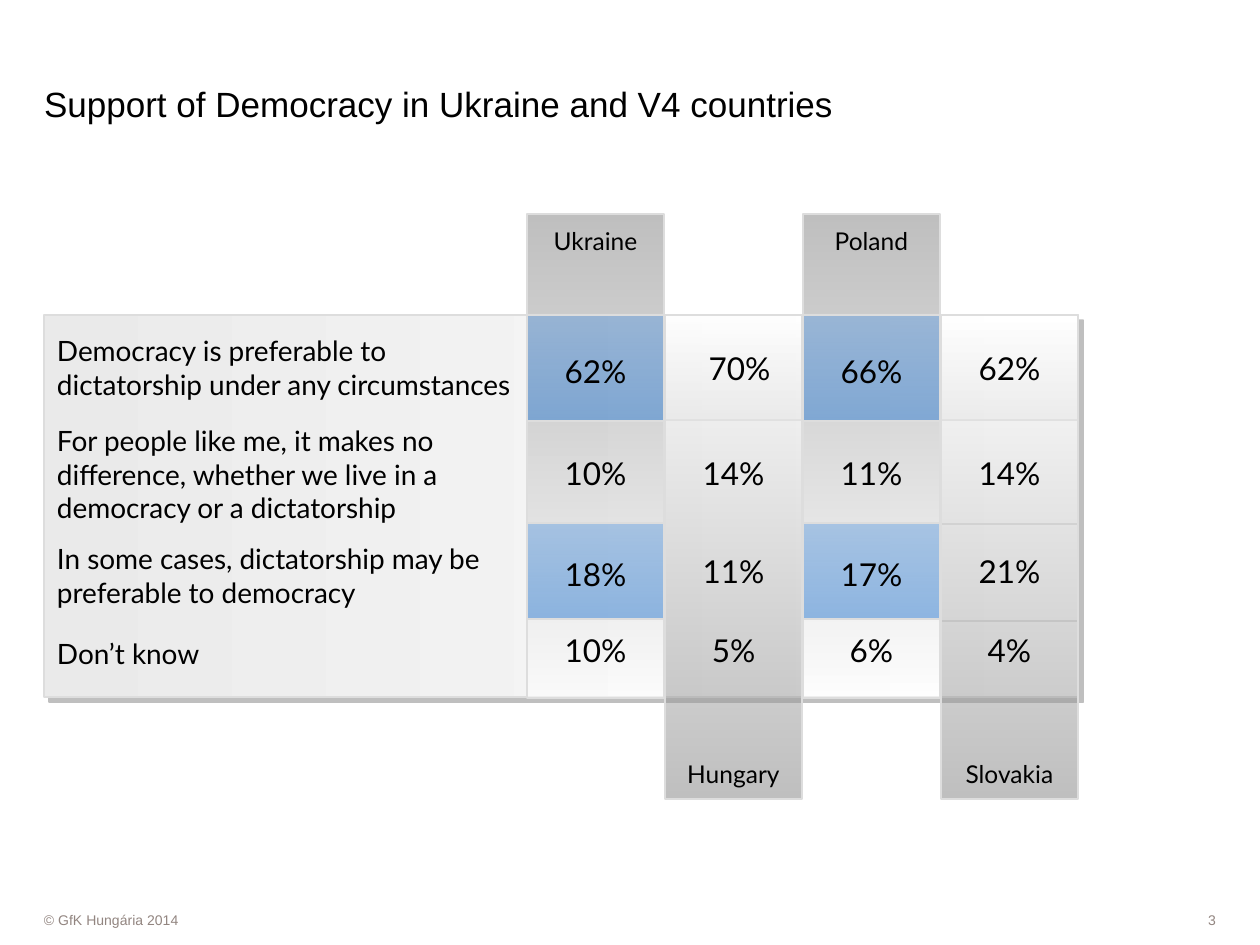
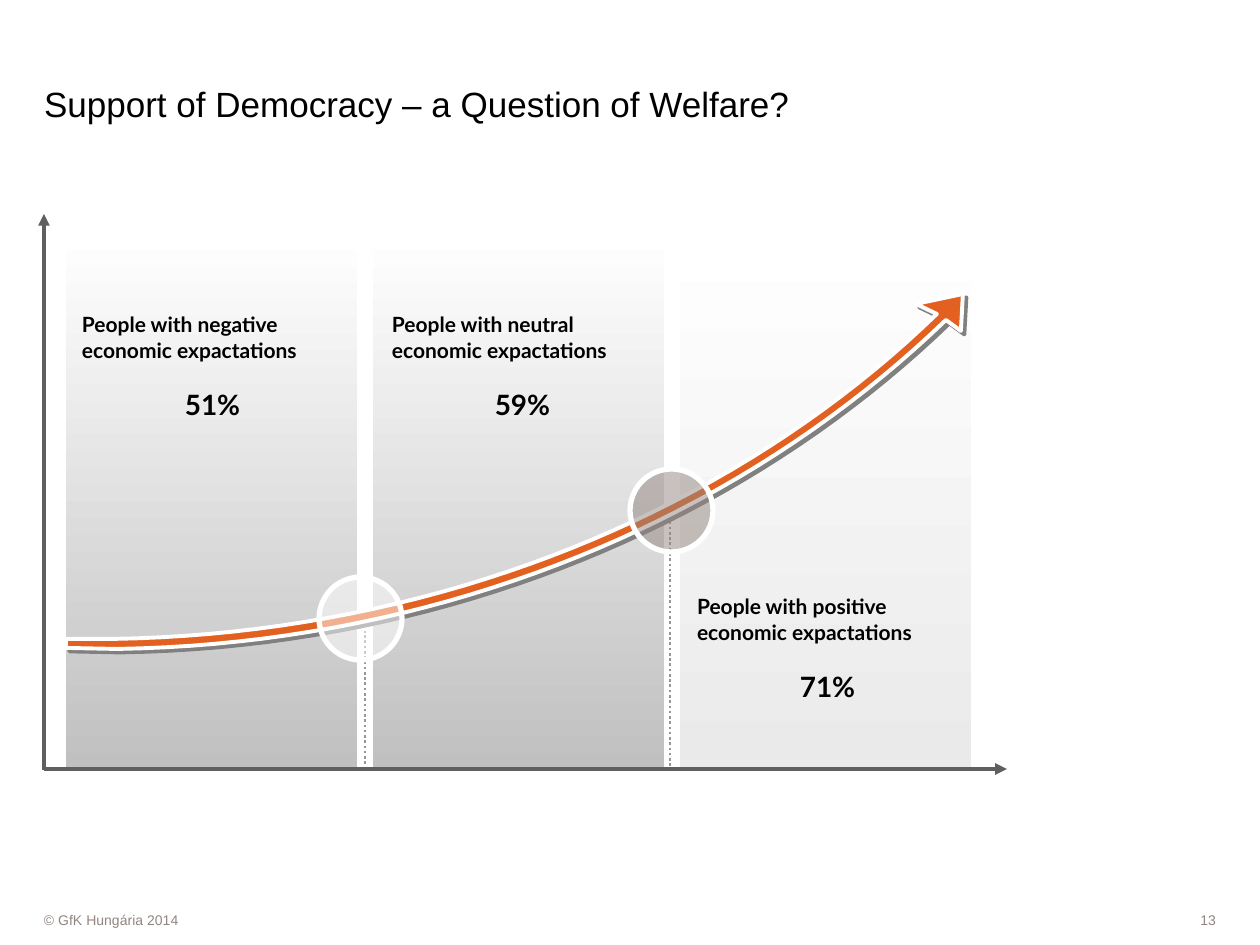
"""Builds two slides on the support of democracy in Ukraine and the V4 countries."""
import pptx
import pptx.dml.color
import pptx.enum.dml
import pptx.enum.shapes
import pptx.enum.text
import pptx.oxml.ns
import pptx.util
from lxml import etree

PX = 914400 / 126
COLOURS = {
    "black": "000000", "white": "FFFFFF", "border": "DDDDDD", "pale": "EAEAEA",
    "silver": "C0C0C0", "grey": "808080", "axis": "5F5F5F", "dots": "969696",
    "taupe": "928580", "sky": "69A2E1", "blue": "2A79D0", "orange": "E36120",
}
SHAPES = pptx.enum.shapes.MSO_SHAPE
ALIGN = pptx.enum.text.PP_ALIGN
ANCHOR = pptx.enum.text.MSO_ANCHOR
COPYRIGHT = "© GfK Hungária 2014"
CELL_INSETS = (15, 15, 15, 10)

SURVEY_TITLE = "Support of Democracy in Ukraine and V4 countries"
ANSWERS = [
    ("Democracy is preferable to dictatorship under any circumstances", 315, 105),
    ("For people like me, it makes no difference, whether we live in a democracy or a dictatorship", 426, 96),
    ("In some cases, dictatorship may be preferable to democracy", 528, 94),
    ("Don’t know", 606, 94),
]
COUNTRIES = [
    ("Ukraine", ["62%", "10%", "18%", "10%"]),
    ("Hungary", ["70%", "14%", "11%", "5%"]),
    ("Poland", ["66%", "11%", "17%", "6%"]),
    ("Slovakia", ["62%", "14%", "21%", "4%"]),
]
VALUE_ROWS = [(315, 106), (424, 97), (523, 96), (602, 96)]
HIGHLIGHTED_ROWS = (0, 2)
FIRST_COLUMN, COLUMN_STEP, COLUMN_WIDTH, COLUMN_HEIGHT = 527, 138, 137, 484
TOP_TAB, TABLE_TOP = 214, 315

WELFARE_TITLE = "Support of Democracy – a Question of Welfare?"
GROUPS = [
    ("People with negative economic expactations", "51%", "silver", 82, 311),
    ("People with neutral economic expactations", "59%", "silver", 392, 311),
    ("People with positive economic expactations", "71%", "pale", 697, 593),
]
PANEL_LEFT, PANEL_STEP = 66, 307
AXES = [((44, 770), (44, 214)), ((44, 769), (1007, 769))]
MARKERS = [("white", 319, 577, (365, 764, 631)), ("taupe", 630, 469, (670, 766, 522))]
LOWER_EDGE = [(117, 649), (447, 644), (742, 517), (946, 320)]
UPPER_EDGE = [(937, 314), (735, 510), (440, 634), (112, 639)]
ARROW_HEAD = [(961, 331), (963, 294), (916, 304)]
ARROW_TAIL = [(66, 639), (66, 648)]


def emu(px):
    return pptx.util.Emu(round(px * PX))


def rgb(name):
    return pptx.dml.color.RGBColor.from_string(COLOURS[name])


def sub(parent, tag, **attributes):
    return etree.SubElement(parent, pptx.oxml.ns.qn(tag), attributes)


def paint(shape, fill=(), border=None, weight=1, opacity=100, angle=270, shadow=None):
    """Applies a solid or two-stop fill, an outline and a (opacity, distance) shadow."""
    properties = shape.element.spPr
    if len(fill) == 2:
        shape.fill.gradient()
        shape.fill.gradient_angle = angle
        for stop, name in zip(shape.fill.gradient_stops, fill):
            stop.color.rgb = rgb(name)
    elif fill:
        shape.fill.solid()
        shape.fill.fore_color.rgb = rgb(fill[0])
    else:
        shape.fill.background()
    if opacity < 100:
        for colour in list(properties.iter(pptx.oxml.ns.qn("a:srgbClr"))):
            sub(colour, "a:alpha", val=str(opacity * 1000))
    if border:
        shape.line.color.rgb = rgb(border)
        shape.line.width = pptx.util.Pt(weight)
    else:
        shape.line.fill.background()
    shape.shadow.inherit = False
    if shadow:
        strength, distance = shadow
        effects = properties.find(pptx.oxml.ns.qn("a:effectLst"))
        cast = sub(effects, "a:outerShdw", dist=str(pptx.util.Pt(distance)),
                   dir="2700000", algn="ctr", rotWithShape="0")
        colour = sub(cast, "a:srgbClr", val=COLOURS["grey"])
        sub(colour, "a:alpha", val=str(strength * 1000))


def add_shape(slide, bounds, kind=SHAPES.RECTANGLE, **style):
    shape = slide.shapes.add_shape(kind, *map(emu, bounds))
    paint(shape, **style)
    return shape


def prepare_frame(shape, insets, anchor):
    frame = shape.text_frame
    frame.word_wrap = True
    frame.vertical_anchor = anchor
    frame.margin_left, frame.margin_top, frame.margin_right, frame.margin_bottom = map(emu, insets)
    return frame


def write(paragraph, text, size, font="Lato", colour="black", align=ALIGN.LEFT, bold=False, spacing=None):
    paragraph.alignment = align
    paragraph.line_spacing = spacing
    run = paragraph.add_run()
    run.text = text
    run.font.size = pptx.util.Pt(size)
    run.font.name = font
    run.font.bold = bold
    run.font.color.rgb = rgb(colour)


def label(shape, text, size, insets=(0, 0, 0, 0), anchor=ANCHOR.MIDDLE, **style):
    write(prepare_frame(shape, insets, anchor).paragraphs[0], text, size, **style)


def add_text(slide, bounds):
    return slide.shapes.add_textbox(*map(emu, bounds))


def add_line(slide, start, end, colour, weight, arrow=False, dotted=False):
    line = slide.shapes.add_connector(pptx.enum.shapes.MSO_CONNECTOR.STRAIGHT, *map(emu, start + end))
    line.line.color.rgb = rgb(colour)
    line.line.width = pptx.util.Pt(weight)
    if dotted:
        line.line.dash_style = pptx.enum.dml.MSO_LINE.ROUND_DOT
    properties = line.element.spPr
    if arrow:
        sub(properties.find(pptx.oxml.ns.qn("a:ln")), "a:tailEnd", type="triangle")
    sub(properties, "a:effectLst")


def add_slide(deck, title, number):
    slide = deck.slides.add_slide(deck.slide_layouts[6])
    footers = [(number, (1037, 910, 179, 20), ALIGN.RIGHT), (COPYRIGHT, (44, 910, 973, 20), ALIGN.LEFT)]
    for text, bounds, align in footers:
        label(add_shape(slide, bounds, fill=["white"]), text, 8, font="Arial", colour="taupe", align=align)
    label(add_text(slide, (44, 35, 873, 90)), title, 20, anchor=ANCHOR.BOTTOM, font="Arial")
    return slide


def curve(points, steps=40):
    """Returns points along a cubic Bézier curve."""
    (ax, ay), (bx, by), (cx, cy), (dx, dy) = points
    for step in range(steps + 1):
        t = step / steps
        u = 1 - t
        a, b, c, d = u ** 3, 3 * u * u * t, 3 * u * t * t, t ** 3
        yield a * ax + b * bx + c * cx + d * dx, a * ay + b * by + c * cy + d * dy


def build_survey(deck):
    slide = add_slide(deck, SURVEY_TITLE, "3")
    add_shape(slide, (44, TABLE_TOP, 1034, 382), fill=["pale", "white"], angle=0,
              border="border", shadow=(50, 4.2))
    columns = [(FIRST_COLUMN + i * COLUMN_STEP, *country) for i, country in enumerate(COUNTRIES)]
    glass = {"border": "border", "opacity": 50}
    heading = {"insets": CELL_INSETS, "align": ALIGN.CENTER, "spacing": 0.9}

    for left, country, values in columns[::2]:
        tab = add_shape(slide, (left, TOP_TAB, COLUMN_WIDTH, COLUMN_HEIGHT), fill=["grey", "white"], **glass)
        label(tab, country, 14, anchor=ANCHOR.TOP, **heading)
        for row in HIGHLIGHTED_ROWS:
            top, height = VALUE_ROWS[row]
            cell = add_shape(slide, (left, top, COLUMN_WIDTH, height), fill=["sky", "blue"], **glass)
            label(cell, values[row], 18, insets=CELL_INSETS, align=ALIGN.CENTER)
    for text, top, height in ANSWERS:
        label(add_text(slide, (44, top, 496, height)), text, 16, insets=(13, 6, 13, 6))
    for left, country, values in columns[1::2]:
        add_shape(slide, (left, TABLE_TOP, COLUMN_WIDTH, 105), fill=["white", "pale"], **glass)
        if country == "Slovakia":
            add_shape(slide, (left, 524, COLUMN_WIDTH, 97), border="border")
        tab = add_shape(slide, (left, TABLE_TOP, COLUMN_WIDTH, COLUMN_HEIGHT), fill=["white", "grey"], **glass)
        label(tab, country, 14, anchor=ANCHOR.BOTTOM, **heading)
    for index, (left, country, values) in enumerate(columns):
        for row, (top, height) in enumerate(VALUE_ROWS):
            if index % 2 or row not in HIGHLIGHTED_ROWS:
                nudge = 6 if (country, row) == ("Hungary", 0) else 0
                label(add_text(slide, (left + nudge, top, COLUMN_WIDTH, height)), values[row], 18, **heading)


def build_welfare(deck):
    slide = add_slide(deck, WELFARE_TITLE, "13")
    for i, (_, _, shade, _, _) in enumerate(GROUPS):
        add_shape(slide, (PANEL_LEFT + i * PANEL_STEP, 233, 291, 537), fill=["white", shade])
    for start, end in AXES:
        add_line(slide, start, end, "axis", 2.25, arrow=True)

    outline = [*curve(LOWER_EDGE), *ARROW_HEAD, *curve(UPPER_EDGE), *ARROW_TAIL]
    builder = slide.shapes.build_freeform(*map(emu, outline[0]))
    builder.add_line_segments([(emu(x), emu(y)) for x, y in outline[1:]], close=True)
    paint(builder.convert_to_shape(), fill=["orange"], border="white", weight=2.25, shadow=(100, 2.8))

    for _, _, _, (x, bottom, top) in MARKERS:
        add_line(slide, (x, bottom), (x, top), "dots", 1.5, dotted=True)
    for colour, left, top, _ in MARKERS:
        add_shape(slide, (left, top, 83, 83), SHAPES.OVAL, fill=[colour], opacity=50)
        add_shape(slide, (left, top, 83, 83), SHAPES.OVAL, border="white", weight=3)
    for group, share, _, left, top in GROUPS:
        frame = prepare_frame(add_text(slide, (left, top, 261, 111)), (0, 0, 0, 0), ANCHOR.MIDDLE)
        write(frame.paragraphs[0], group, 12, bold=True)
        result = frame.add_paragraph()
        result.space_before = pptx.util.Pt(14.4)
        write(result, share, 16, align=ALIGN.CENTER, bold=True)


def main():
    deck = pptx.Presentation()
    deck.slide_width, deck.slide_height = emu(1260), emu(945)
    build_survey(deck)
    build_welfare(deck)
    deck.save("out.pptx")


if __name__ == "__main__":
    main()
